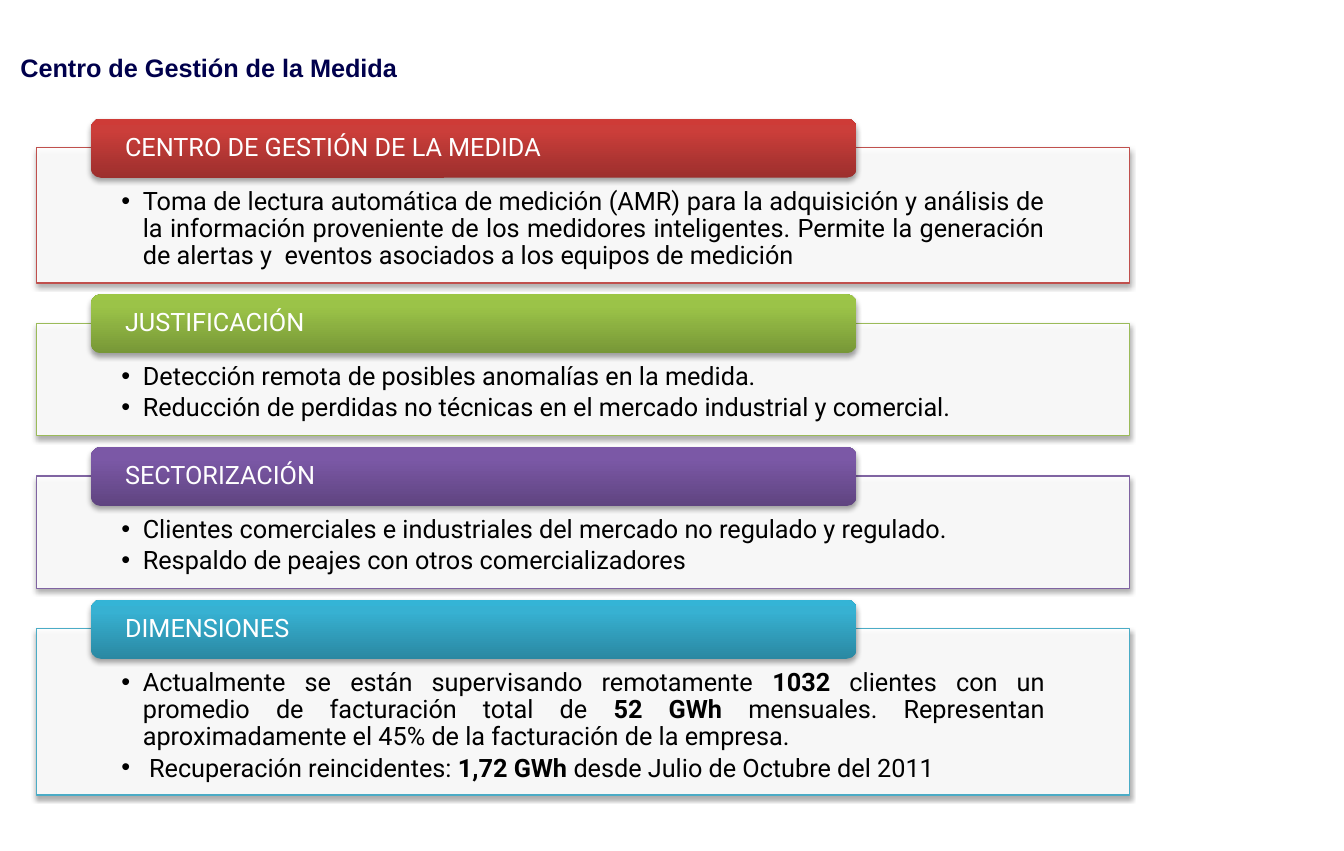
from copy import deepcopy
from lxml.etree import SubElement as Sub
from pptx import Presentation
from pptx.dml.color import RGBColor as RGB
from pptx.enum.shapes import MSO_SHAPE as Form
from pptx.enum.text import MSO_ANCHOR as Anchor, PP_ALIGN as Align
from pptx.oxml.ns import qn
from pptx.util import Cm, Pt

HUES = {
    "title": "00004C", "text": "000000", "white": "FFFFFF", "shade": "000000",
    "red": ("C0504D", "9C2F2D", "CB3E3A", "CE3B37"),
    "green": ("9BBB59", "779737", "9BC348", "9DC746"),
    "violet": ("8064A2", "5F4480", "7B58A6", "7C57A8"),
    "cyan": ("4BACC6", "2A88A2", "37B1D2", "34B4D6"),
}

CARDS = [
    ("CENTRO DE GESTIÓN DE LA MEDIDA", "red", 3.02, [
        "Toma de lectura automática de medición (AMR) para la adquisición y análisis de "
        "la información proveniente de los medidores inteligentes. Permite la generación "
        "de alertas y  eventos asociados a los equipos de medición"]),
    ("JUSTIFICACIÓN", "green", 2.51, [
        "Detección remota de posibles anomalías en la medida.",
        "Reducción de perdidas no técnicas en el mercado industrial y comercial."]),
    ("SECTORIZACIÓN", "violet", 2.51, [
        "Clientes comerciales e industriales del mercado no regulado y regulado.",
        "Respaldo de peajes con otros comercializadores"]),
    ("DIMENSIONES", "cyan", 3.71, [
        "Actualmente se están supervisando remotamente **1032** clientes con un "
        "promedio de facturación total de **52 GWh** mensuales. Representan "
        "aproximadamente el 45% de la facturación de la empresa.",
        " Recuperación reincidentes: **1,72 GWh **desde Julio de Octubre del 2011"]),
]


class Deck:
    font, size = "Roboto", Pt(16)
    left, wide, gap = 0.81, 24.41, 0.9

    def __init__(self):
        self.prs = Presentation()
        self.prs.slide_width, self.prs.slide_height = Cm(30), Cm(19)
        self.slide = self.prs.slides.add_slide(self.prs.slide_layouts[5])

    def style(self, run, hue, bold=False, face=None):
        font = run.font
        font.name, font.size, font.bold = face or self.font, self.size, bold
        font.color.rgb = RGB.from_string(HUES[hue])

    def inset(self, frame, left, top, right, low):
        frame.word_wrap = True
        frame.margin_left, frame.margin_top = Cm(left), Cm(top)
        frame.margin_right, frame.margin_bottom = Cm(right), Cm(low)

    def title(self, text):
        box = self.slide.shapes.title
        box.left, box.top, box.width, box.height = Cm(0.2), Cm(0.03), Cm(21.74), Cm(2.97)
        frame = box.text_frame
        frame.text = text
        frame.vertical_anchor = Anchor.MIDDLE
        para = frame.paragraphs[0]
        para.alignment = Align.LEFT
        self.style(para.runs[0], "title", True, "Arial")

    def shape(self, form, *area):
        item = self.slide.shapes.add_shape(form, *map(Cm, area))
        item.shadow.inherit = False
        glow = item._element.spPr.find(qn("a:effectLst"))
        cast = Sub(glow, qn("a:outerShdw"), blurRad="40000", dist="23000",
                   dir="5400000", rotWithShape="0")
        tint = Sub(cast, qn("a:srgbClr"), val=HUES["shade"])
        Sub(tint, qn("a:alpha"), val="35000")
        return item

    def panel(self, top, high, hue):
        item = self.shape(Form.RECTANGLE, self.left, top, self.wide, high)
        item.fill.solid()
        item.fill.fore_color.rgb = RGB.from_string(HUES["white"])
        tint = item._element.spPr.find(qn("a:solidFill"))[0]
        Sub(tint, qn("a:alpha"), val="90000")
        item.line.color.rgb = RGB.from_string(HUES[hue][0])
        item.line.width = Pt(0.75)

    def list(self, top, high, lines):
        box = self.slide.shapes.add_textbox(Cm(self.left), Cm(top), Cm(self.wide), Cm(high))
        frame = box.text_frame
        self.inset(frame, 1.9, 0.91, 1.9, 0.3)
        for num, line in enumerate(lines):
            para = frame.add_paragraph() if num else frame.paragraphs[0]
            props = para._p.get_or_add_pPr()
            props.set("marL", str(Cm(0.48)))
            props.set("indent", str(-Cm(0.48)))
            Sub(props, qn("a:buFont"), typeface="Arial")
            Sub(props, qn("a:buChar"), char="•")
            para.alignment = Align.JUSTIFY
            para.line_spacing, para.space_after = 0.9, Pt(2.4)
            for part, text in enumerate(line.split("**")):
                run = para.add_run()
                run.text = text
                self.style(run, "text", part % 2 == 1)

    def tab(self, top, text, hue):
        item = self.shape(Form.ROUNDED_RECTANGLE, 2.03, top - 0.65, 17.09, 1.32)
        item.line.fill.background()
        item.fill.gradient()
        item.fill.gradient_angle = 90
        stops = item._element.spPr.find(qn("a:gradFill")).find(qn("a:gsLst"))
        stops.append(deepcopy(stops[-1]))
        for stop, spot, tone in zip(item.fill.gradient_stops, (0, 0.8, 1), HUES[hue][1:]):
            stop.position = spot
            stop.color.rgb = RGB.from_string(tone)
        frame = item.text_frame
        self.inset(frame, 0.7, 0, 0.7, 0)
        frame.text = text
        frame.vertical_anchor = Anchor.MIDDLE
        para = frame.paragraphs[0]
        para.alignment, para.line_spacing = Align.JUSTIFY, 0.9
        self.style(para.runs[0], "white")

    def cards(self, top, cards):
        for name, hue, high, lines in cards:
            self.panel(top, high, hue)
            self.list(top, high, lines)
            self.tab(top, name, hue)
            top += high + self.gap


def main():
    deck = Deck()
    deck.title("Centro de Gestión de la Medida")
    deck.cards(3.3, CARDS)
    deck.prs.save("out.pptx")


if __name__ == "__main__":
    main()
